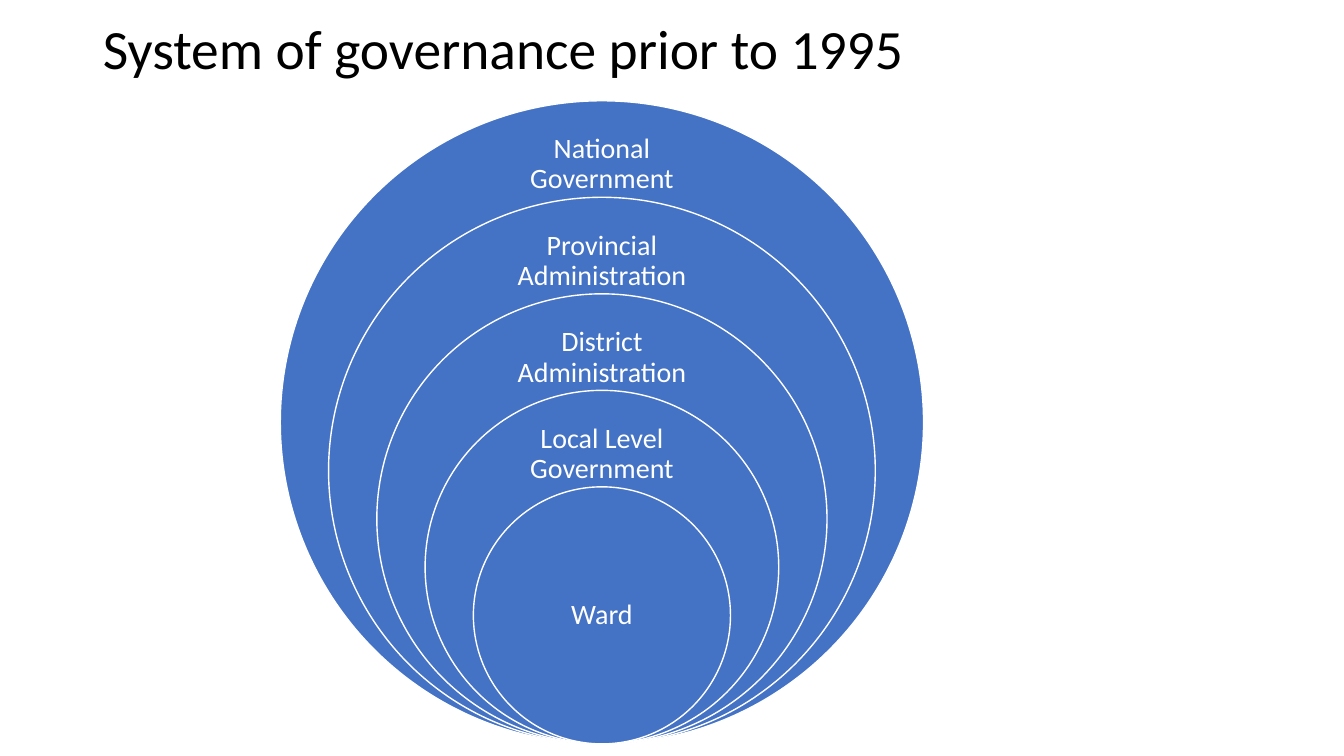
from pptx import Presentation
from pptx.dml.color import RGBColor
from pptx.enum.shapes import MSO_SHAPE
from pptx.enum.text import MSO_ANCHOR, MSO_AUTO_SIZE, PP_ALIGN
from pptx.util import Inches, Pt

OVAL = MSO_SHAPE.OVAL
MIDDLE = MSO_ANCHOR.MIDDLE
NO_FIT = MSO_AUTO_SIZE.NONE
LEFT, CENTER = PP_ALIGN.LEFT, PP_ALIGN.CENTER

COLORS = {"circle": "4472C4", "white": "FFFFFF", "title": "000000"}
FONT = "Calibri"

CENTER_X, BOTTOM = 5.97, 7.38
OUTER, INNER = 6.38, 2.55
LABEL_DROP, LABEL_HEIGHT = 0.32, 0.63
LEVELS = [
    ("National Government", 2.39),
    ("Provincial Administration", 2.34),
    ("District Administration", 2.31),
    ("Local Level Government", 1.89),
    ("Ward", 1.8),
]


class GovernanceSlide:
    """Holds the style and the current slide, and draws its elements."""

    def __init__(self, prs):
        self.slide = prs.slides.add_slide(prs.slide_layouts[5])
        self.group = self.slide.shapes.add_group_shape()

    def color(self, name):
        return RGBColor.from_string(COLORS[name])

    def text(self, sp, text, size, color, align):
        tf = sp.text_frame
        tf.text = text
        tf.word_wrap = True
        tf.auto_size = NO_FIT
        tf.vertical_anchor = MIDDLE
        p = tf.paragraphs[0]
        p.alignment = align
        p.line_spacing = 0.9
        font = p.runs[0].font
        font.name = FONT
        font.size = Pt(size)
        font.color.rgb = self.color(color)

    def title(self, text):
        sp = self.slide.shapes.title
        sp.left, sp.top = Inches(0.92), Inches(0.2)
        sp.width, sp.height = Inches(11.5), Inches(0.62)
        self.text(sp, text, 39.6, "title", LEFT)

    def circle(self, size):
        sp = self.group.shapes.add_shape(
            OVAL, Inches(CENTER_X - size / 2), Inches(BOTTOM - size),
            Inches(size), Inches(size))
        sp.shadow.inherit = False
        sp.fill.solid()
        sp.fill.fore_color.rgb = self.color("circle")
        sp.line.color.rgb = self.color("white")
        sp.line.width = Pt(1)

    def label(self, text, top, width, height):
        sp = self.group.shapes.add_textbox(
            Inches(CENTER_X - width / 2), Inches(top),
            Inches(width), Inches(height))
        tf = sp.text_frame
        tf.margin_left = tf.margin_right = Inches(0.16)
        tf.margin_top = tf.margin_bottom = Inches(0.16)
        self.text(sp, text, 20, "white", CENTER)


def main():
    prs = Presentation()
    prs.slide_width, prs.slide_height = Inches(13.33), Inches(7.5)
    s = GovernanceSlide(prs)
    s.title("System of governance prior to 1995")
    last = len(LEVELS) - 1
    step = (OUTER - INNER) / last
    for i, (name, width) in enumerate(LEVELS):
        size = OUTER - i * step
        s.circle(size)
        if i < last:
            s.label(name, BOTTOM - size + LABEL_DROP, width, LABEL_HEIGHT)
        else:
            s.label(name, BOTTOM - size * 3 / 4, width, size / 2)
    prs.save("out.pptx")


if __name__ == "__main__":
    main()
